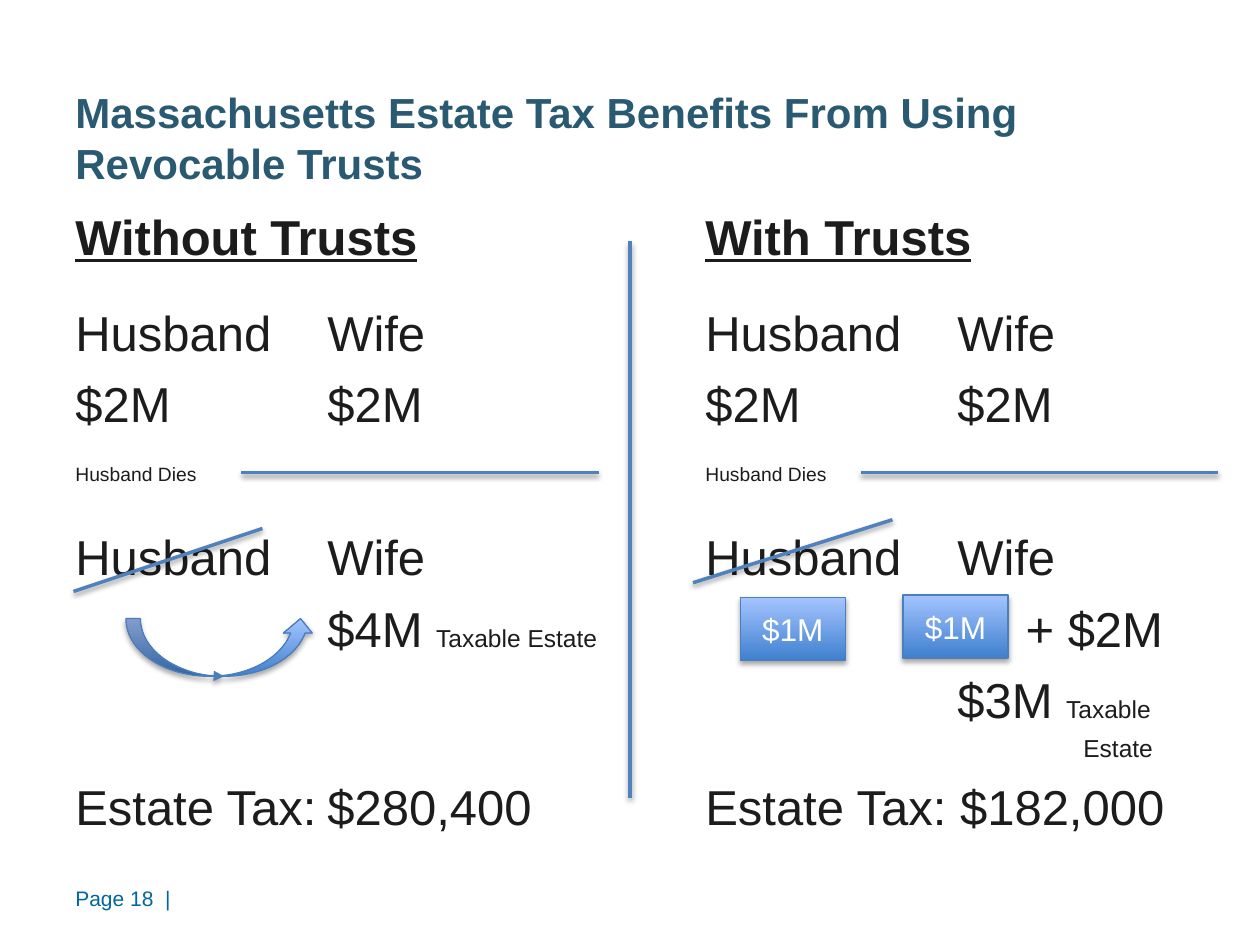
from lxml import etree
from pptx import Presentation
from pptx.dml.color import RGBColor
from pptx.enum.shapes import MSO_CONNECTOR, MSO_SHAPE
from pptx.enum.text import MSO_ANCHOR, PP_ALIGN
from pptx.oxml.ns import qn
from pptx.util import Pt

STRAIGHT = MSO_CONNECTOR.STRAIGHT
RECTANGLE = MSO_SHAPE.RECTANGLE
CURVED_ARROW = MSO_SHAPE.CURVED_UP_ARROW
MIDDLE = MSO_ANCHOR.MIDDLE
CENTER = PP_ALIGN.CENTER

INK, TEAL, BLUE, WHITE = "1C1C1C", "2A5972", "0066A1", "FFFFFF"
RULE, EDGE, DARK, LIGHT = "4F81BD", "4B7EBC", "3F80CE", "A4C4FF"
COLUMNS = (144, 360, 504)

PEOPLE = [("Husband\tWife\tHusband\tWife", 28)]
COMPARISON = [
    (0, (360,), [("Without Trusts", 28, True), ("\t", 28), ("With Trusts", 28, True)]),
    (21, COLUMNS, PEOPLE),
    (7, COLUMNS, [("$2M\t$2M\t$2M\t$2M", 28)]),
    (17, (360,), [("Husband Dies\tHusband Dies", 11)]),
    (24, COLUMNS, PEOPLE),
    (7, (144, 543), [("\t$4M ", 28), ("Taxable Estate", 14), ("\t+ $2M", 28)]),
    (7, (504,), [("\t$3M ", 28), ("Taxable", 14)]),
    (3, (576,), [("\tEstate", 14)]),
    (8, (144, 360), [("Estate Tax:\t$280,400\tEstate Tax: $182,000", 28)]),
]
LINES = [
    (360, 138, 360, 456),
    (138, 270, 342, 270),
    (42, 338, 150, 302),
    (492, 270, 696, 270),
    (396, 333, 510, 297),
]


def color(value):
    """Turn a hex string into a colour."""
    return RGBColor.from_string(value)


def add_span(para, text, size, tint, bold=False, underline=False):
    """Add one formatted run to a paragraph."""
    span = para.add_run()
    span.text = text
    span.font.name = "Arial"
    span.font.size = Pt(size)
    span.font.color.rgb = color(tint)
    span.font.bold = bold
    span.font.underline = underline


def add_box(page, left, top, width, height):
    """Add a wrapping text box and return its text frame."""
    box = page.shapes.add_textbox(Pt(left), Pt(top), Pt(width), Pt(height))
    box.text_frame.word_wrap = True
    return box.text_frame


def add_tabs(para, stops):
    """Give a paragraph left tab stops."""
    tabs = etree.SubElement(para._p.get_or_add_pPr(), qn("a:tabLst"))
    for stop in stops:
        etree.SubElement(tabs, qn("a:tab"), pos=str(Pt(stop)), algn="l")


def add_shadow(item, distance, opacity):
    """Cast a soft black shadow straight down."""
    effects = etree.SubElement(item._element.spPr, qn("a:effectLst"))
    shadow = etree.SubElement(effects, qn("a:outerShdw"), blurRad=str(Pt(3.1)),
                              dist=str(Pt(distance)), dir="5400000", rotWithShape="0")
    tint = etree.SubElement(shadow, qn("a:srgbClr"), val="000000")
    etree.SubElement(tint, qn("a:alpha"), val=str(opacity * 1000))


def add_line(page, ends):
    """Add a shadowed straight line."""
    line = page.shapes.add_connector(STRAIGHT, *[Pt(value) for value in ends])
    line.line.color.rgb = color(RULE)
    line.line.width = Pt(2)
    add_shadow(line, 1.6, 38)


def add_gradient_shape(page, kind, left, top, width, height):
    """Add a shadowed shape that fades from dark below to light above."""
    shape = page.shapes.add_shape(kind, Pt(left), Pt(top), Pt(width), Pt(height))
    shape.fill.gradient()
    shape.fill.gradient_angle = 90
    for stop, position, tint in zip(shape.fill.gradient_stops, (0, 1), (DARK, LIGHT)):
        stop.position = position
        stop.color.rgb = color(tint)
    shape.line.color.rgb = color(EDGE)
    shape.line.width = Pt(0.75)
    add_shadow(shape, 1.8, 35)
    return shape


def add_transfer_arrow(page):
    """Add the curved arrow from husband to wife."""
    arrow = add_gradient_shape(page, CURVED_ARROW, 72, 353.5, 108, 33)
    outline = arrow._element.spPr.find(qn("a:ln"))
    etree.SubElement(outline, qn("a:tailEnd"), type="triangle")


def add_trust(page, left, top):
    """Add a trust block holding one million."""
    trust = add_gradient_shape(page, RECTANGLE, left, top, 60, 36)
    trust.text_frame.vertical_anchor = MIDDLE
    para = trust.text_frame.paragraphs[0]
    para.alignment = CENTER
    add_span(para, "$1M", 18, WHITE)


def add_comparison(page):
    """Add the two columns of estate figures."""
    frame = add_box(page, 36, 114.5, 648, 368)
    for index, (gap, stops, spans) in enumerate(COMPARISON):
        para = frame.add_paragraph() if index else frame.paragraphs[0]
        add_tabs(para, stops)
        if gap:
            para.space_before = Pt(gap)
        for text, size, *heading in spans:
            add_span(para, text, size, INK, bool(heading), bool(heading))


def main():
    """Build and save the slide."""
    deck = Presentation()
    deck.slide_width, deck.slide_height = Pt(720), Pt(540)
    page = deck.slides.add_slide(deck.slide_layouts[6])
    footer = add_box(page, 36, 502.5, 438, 22)
    add_span(footer.paragraphs[0], "Page 18  |", 12, BLUE)
    add_comparison(page)
    title = add_box(page, 36, 45, 648, 67)
    title.vertical_anchor = MIDDLE
    add_span(title.paragraphs[0],
             "Massachusetts Estate Tax Benefits From Using Revocable Trusts", 24, TEAL, True)
    for ends in LINES:
        add_line(page, ends)
    add_transfer_arrow(page)
    add_trust(page, 423, 341.5)
    add_trust(page, 516, 340)
    deck.save("out.pptx")


if __name__ == "__main__":
    main()
